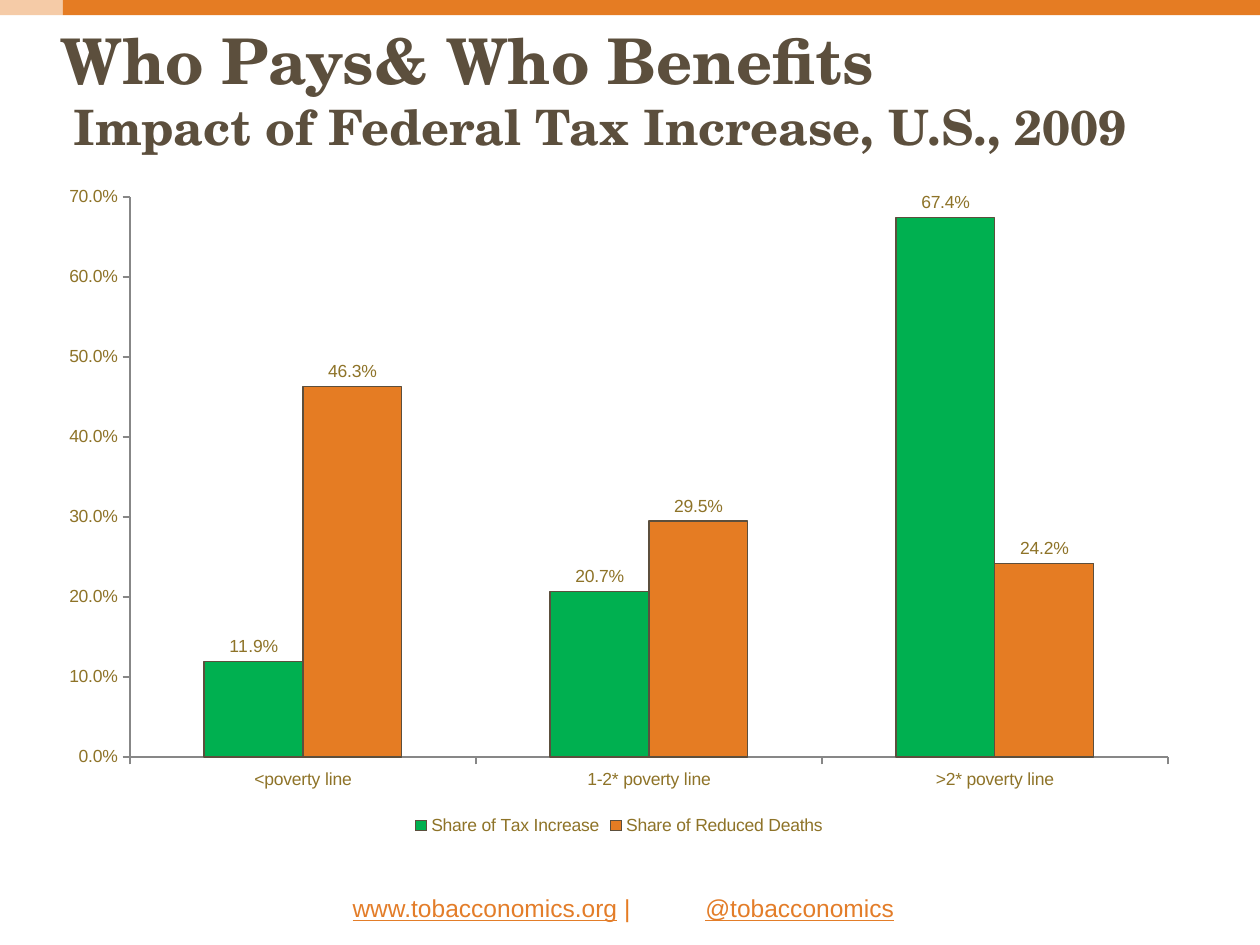
from lxml.etree import SubElement
from pptx import Presentation
from pptx.chart.data import CategoryChartData
from pptx.dml.color import RGBColor
from pptx.enum.chart import XL_CHART_TYPE, XL_LABEL_POSITION, XL_LEGEND_POSITION, XL_TICK_MARK
from pptx.enum.shapes import MSO_SHAPE
from pptx.enum.text import MSO_ANCHOR
from pptx.oxml.ns import qn
from pptx.util import Pt

THEME = {
    "orange": RGBColor.from_string("E57C23"),
    "peach": RGBColor.from_string("F5CBA7"),
    "link": RGBColor.from_string("E37D29"),
    "green": RGBColor.from_string("00B050"),
    "brown": RGBColor.from_string("5C4F3D"),
    "gold": RGBColor.from_string("8E7328"),
    "axis": RGBColor.from_string("878787"),
    "heading_font": "TeX Gyre Schola",
    "body_font": "Arial",
    "title_size": 36,
    "subtitle_size": 27.9,
    "footer_size": 14,
    "chart_size": 10,
}

SLIDE_SIZE = (720, 540)
BANDS = [("peach", 0, 36), ("orange", 36, 684)]
BAND_HEIGHT = 8.64
TITLE_BOX = (34.56, 11.52, 659.52, 77.76)
TITLE_LINES = [
    ("Who Pays& Who Benefits", "title_size", 0),
    ("Impact of Federal Tax Increase, U.S., 2009", "subtitle_size", 7.75),
]
CHART_BOX = (26.64, 99.36, 654.48, 380.88)
PLOT_BOX = (74.3, 112.6, 593.1, 320)
CATEGORIES = ["<poverty line", "1-2* poverty line", ">2* poverty line"]
SERIES = [
    ("Share of Tax Increase", (0.119, 0.207, 0.674), "green"),
    ("Share of Reduced Deaths", (0.463, 0.295, 0.242), "orange"),
]
PERCENT = "0.0%"
FOOTER_BOX = (194.4, 506.88, 360, 24.48)
FOOTER_TAB = 201.6
FOOTER_RUNS = [
    ("www.tobacconomics.org", "link", True),
    (" |\t", "orange", False),
    ("@tobacconomics", "link", True),
]


def points(box):
    return [Pt(value) for value in box]


def style_font(font, family, size, color):
    font.name = THEME[family]
    font.size = Pt(THEME[size])
    font.color.rgb = THEME[color]


def add_bands(slide):
    for color, left, width in BANDS:
        band = slide.shapes.add_shape(MSO_SHAPE.RECTANGLE, *points((left, 0, width, BAND_HEIGHT)))
        band.shadow.inherit = False
        band.fill.solid()
        band.fill.fore_color.rgb = THEME[color]
        band.line.fill.background()


def add_title(slide):
    frame = slide.shapes.add_textbox(*points(TITLE_BOX)).text_frame
    frame.word_wrap = True
    frame.vertical_anchor = MSO_ANCHOR.MIDDLE
    frame.margin_left = frame.margin_right = frame.margin_top = frame.margin_bottom = 0
    for index, (text, size, indent) in enumerate(TITLE_LINES):
        paragraph = frame.add_paragraph() if index else frame.paragraphs[0]
        paragraph.text = text
        paragraph._p.get_or_add_pPr().set("marL", str(Pt(indent)))
        style_font(paragraph.font, "heading_font", size, "brown")
        paragraph.font.bold = True


def place_plot(chart):
    plot_area = chart._chartSpace.chart.plotArea
    layout = plot_area.find(qn("c:layout"))
    if layout is None:
        layout = SubElement(plot_area, qn("c:layout"))
        plot_area.insert(0, layout)
    manual = SubElement(layout, qn("c:manualLayout"))
    left, top, width, height = CHART_BOX
    settings = {
        "layoutTarget": "inner",
        "xMode": "edge",
        "yMode": "edge",
        "x": (PLOT_BOX[0] - left) / width,
        "y": (PLOT_BOX[1] - top) / height,
        "w": PLOT_BOX[2] / width,
        "h": PLOT_BOX[3] / height,
    }
    for name, value in settings.items():
        SubElement(manual, qn(f"c:{name}")).set("val", str(value))


def add_chart(slide):
    data = CategoryChartData(number_format=PERCENT)
    data.categories = CATEGORIES
    for name, values, _ in SERIES:
        data.add_series(name, values)
    chart = slide.shapes.add_chart(XL_CHART_TYPE.COLUMN_CLUSTERED, *points(CHART_BOX), data).chart
    style_font(chart.font, "body_font", "chart_size", "gold")
    chart.has_title = False
    chart.has_legend = True
    chart.legend.position = XL_LEGEND_POSITION.BOTTOM
    chart.legend.include_in_layout = False
    for axis in (chart.category_axis, chart.value_axis):
        axis.has_major_gridlines = False
        axis.major_tick_mark = XL_TICK_MARK.OUTSIDE
        axis.minor_tick_mark = XL_TICK_MARK.NONE
        axis.format.line.color.rgb = THEME["axis"]
        axis.format.line.width = Pt(0.75)
    chart.value_axis.minimum_scale = 0
    chart.value_axis.maximum_scale = 0.7
    chart.value_axis.major_unit = 0.1
    chart.value_axis.tick_labels.number_format = PERCENT
    chart.value_axis.tick_labels.number_format_is_linked = False
    plot = chart.plots[0]
    plot.gap_width = 150
    plot.overlap = 0
    plot.vary_by_categories = False
    for series, (_, _, color) in zip(plot.series, SERIES):
        series.format.fill.solid()
        series.format.fill.fore_color.rgb = THEME[color]
        series.format.line.color.rgb = THEME["brown"]
        series.format.line.width = Pt(0.75)
        labels = series.data_labels
        labels.show_value = True
        labels.number_format = PERCENT
        labels.number_format_is_linked = False
        labels.position = XL_LABEL_POSITION.OUTSIDE_END
    place_plot(chart)


def add_footer(slide):
    frame = slide.shapes.add_textbox(*points(FOOTER_BOX)).text_frame
    frame.word_wrap = True
    paragraph = frame.paragraphs[0]
    tabs = SubElement(paragraph._p.get_or_add_pPr(), qn("a:tabLst"))
    tab = SubElement(tabs, qn("a:tab"))
    tab.set("pos", str(Pt(FOOTER_TAB)))
    tab.set("algn", "l")
    for text, color, underline in FOOTER_RUNS:
        run = paragraph.add_run()
        run.text = text
        style_font(run.font, "body_font", "footer_size", color)
        run.font.underline = underline


def main():
    """Build the slide on who pays and who benefits from a tax increase."""
    presentation = Presentation()
    presentation.slide_width, presentation.slide_height = points(SLIDE_SIZE)
    slide = presentation.slides.add_slide(presentation.slide_layouts[6])
    add_bands(slide)
    add_title(slide)
    add_chart(slide)
    add_footer(slide)
    presentation.save("out.pptx")


if __name__ == "__main__":
    main()
